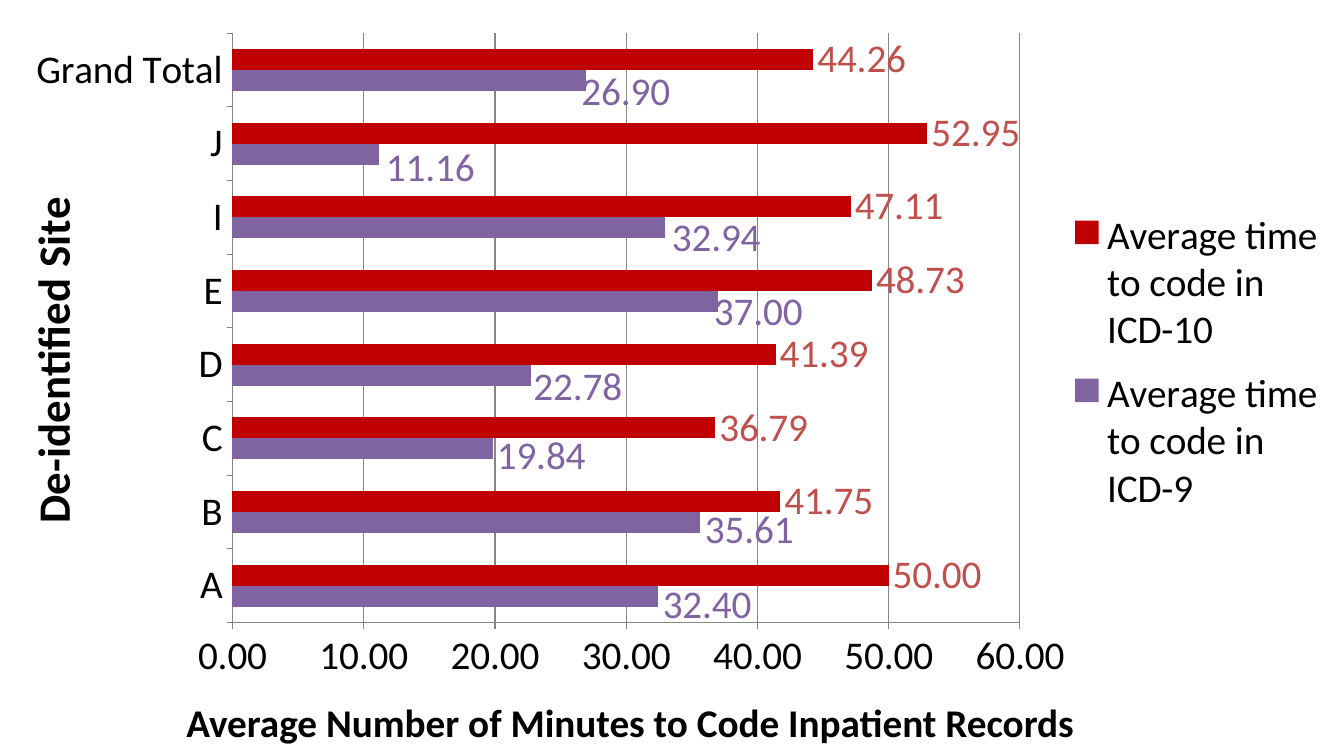
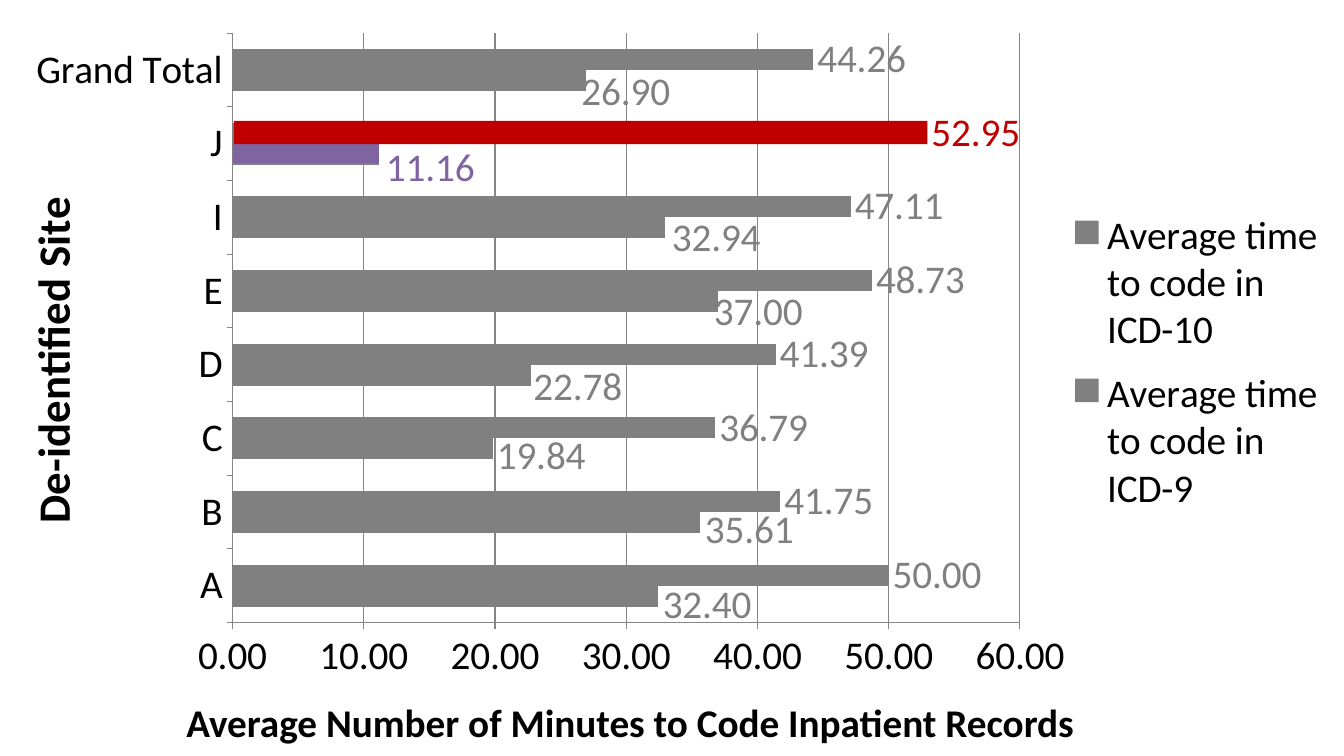
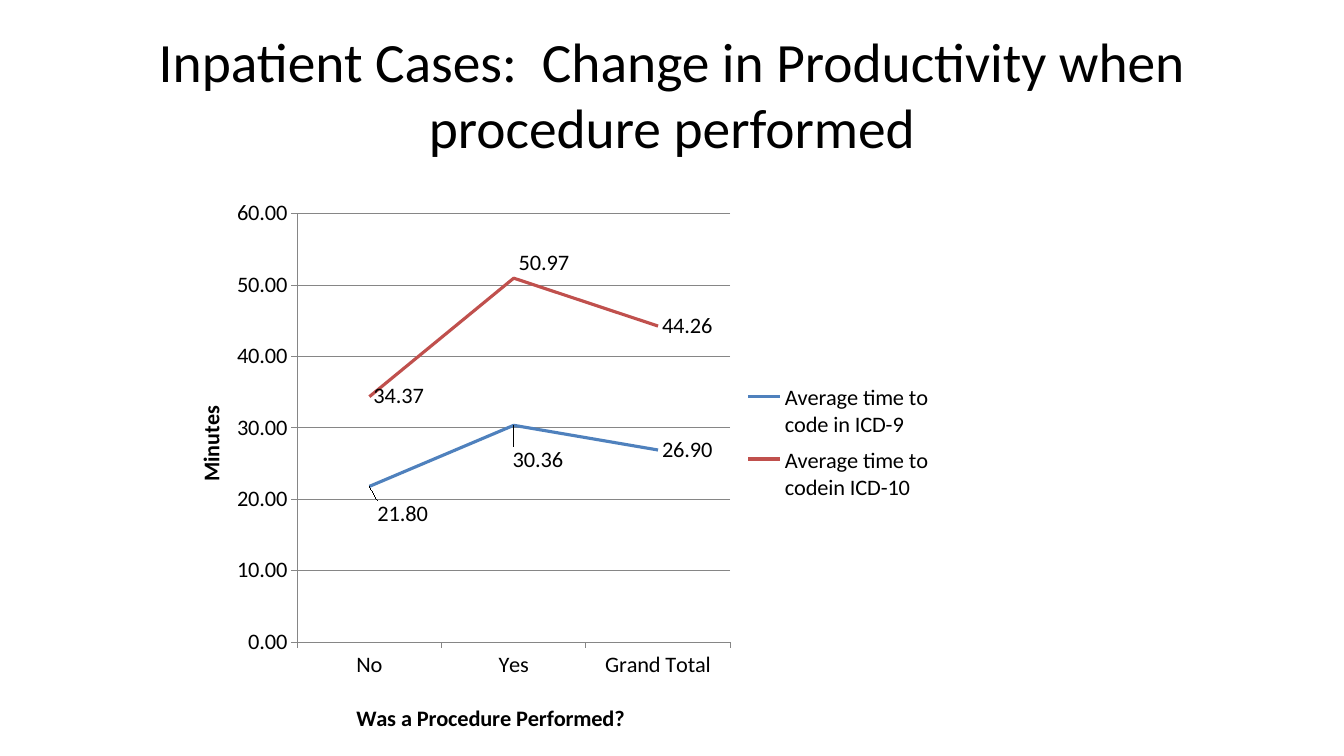
from pptx import Presentation
from pptx.chart.data import CategoryChartData
from pptx.dml.color import RGBColor
from pptx.enum.chart import XL_CHART_TYPE, XL_LABEL_POSITION, XL_LEGEND_POSITION, XL_TICK_MARK
from pptx.enum.shapes import MSO_SHAPE
from pptx.enum.text import MSO_ANCHOR, MSO_AUTO_SIZE, PP_ALIGN
from pptx.oxml import parse_xml
from pptx.oxml.ns import nsdecls, qn
from pptx.util import Inches, Pt

COLORS = {
    "text": "000000", "axis": "868686", "muted": "808080", "purple": "8064A2",
    "crimson": "C00000", "red": "C0504D", "blue": "4F81BD",
}
FONT = "Calibri"
WIDTH, HEIGHT = 13.33, 7.5
COLUMNS, ROWS = 40, 30

ICD9 = "Average time to code in ICD-9"
ICD10 = "Average time to code in ICD-10"
SITES = ["A", "B", "C", "D", "E", "I", "J", "Grand Total"]
SITE_ICD9 = [32.40, 35.61, 19.84, 22.78, 37.00, 32.94, 11.16, 26.90]
SITE_ICD10 = [50.00, 41.75, 36.79, 41.39, 48.73, 47.11, 52.95, 44.26]
# Label shifts in inches, by point
SITE_SHIFTS = dict(enumerate([
    (0.01, 0.09), (0.01, 0.08), (0, 0.07), (-0.02, 0.12),
    (-0.08, 0.11), (0.03, 0.1), (0.03, 0.14), (-0.08, 0.12),
]))
HIGHLIGHT = SITES.index("J")


def style_font(font, size=16, color="text", bold=False):
    font.name, font.size, font.bold = FONT, Pt(size), bold
    font.color.rgb = RGBColor.from_string(COLORS[color])


def write(frame, text, align=PP_ALIGN.CENTER, **style):
    para = frame.paragraphs[0]
    para.alignment = align
    span = para.add_run()
    span.text = text
    style_font(span.font, **style)


def set_layout(part, after=None, inner=False, edge=True, **shares):
    """Place a chart part by shares of the chart's size."""
    for old in part.findall(qn("c:layout")):
        part.remove(old)
    target = '<c:layoutTarget val="inner"/>' if inner else ""
    modes = '<c:xMode val="edge"/><c:yMode val="edge"/>' if edge else ""
    values = "".join(f'<c:{key} val="{value:.4f}"/>' for key, value in shares.items())
    layout = parse_xml(f'<c:layout {nsdecls("c")}><c:manualLayout>{target}{modes}{values}'
                       '</c:manualLayout></c:layout>')
    if after:
        part.find(qn(after)).addnext(layout)
    else:
        part.insert(0, layout)


class SlideMaker:
    def __init__(self):
        self.deck = Presentation()
        self.deck.slide_width, self.deck.slide_height = Inches(WIDTH), Inches(HEIGHT)
        self.page = None

    def cells(self, left, top, width, height):
        column, row = self.deck.slide_width / COLUMNS, self.deck.slide_height / ROWS
        return [round(n) for n in (left * column, top * row, width * column, height * row)]

    def new_page(self, layout):
        self.page = self.deck.slides.add_slide(self.deck.slide_layouts.get_by_name(layout))

    def title(self, text, *place):
        box = self.page.shapes.title
        box.left, box.top, box.width, box.height = self.cells(*place)
        box.text_frame.vertical_anchor = MSO_ANCHOR.MIDDLE
        write(box.text_frame, text, size=39.6)

    def text(self, text, *place, **style):
        box = self.page.shapes.add_textbox(*self.cells(*place))
        box.text_frame.word_wrap = True
        box.text_frame.auto_size = MSO_AUTO_SIZE.SHAPE_TO_FIT_TEXT
        write(box.text_frame, text, **style)

    def bar(self, color, *place):
        shape = self.page.shapes.add_shape(MSO_SHAPE.RECTANGLE, *self.cells(*place))
        shape.shadow.inherit = False
        shape.fill.solid()
        shape.fill.fore_color.rgb = RGBColor.from_string(COLORS[color])
        shape.line.fill.background()

    def chart(self, kind, place, categories, series, plot, legend, size=16):
        data = CategoryChartData(number_format="0.00")
        data.categories = categories
        for entry in series:
            data.add_series(entry["name"], entry["values"])
        frame = self.page.shapes.add_chart(kind, *self.cells(*place), data)
        chart = frame.chart
        style_font(chart.font)
        chart.has_title = False
        chart.plots[0].vary_by_categories = False
        set_layout(chart.plots[0]._element.getparent(), inner=True, **plot)

        # Legend
        chart.has_legend = True
        chart.legend.position = XL_LEGEND_POSITION.RIGHT
        chart.legend.include_in_layout = False
        style_font(chart.legend.font, size=size)
        set_layout(chart.legend._element, after="c:legendPos", **legend)

        # Axes
        for axis in (chart.category_axis, chart.value_axis):
            axis.major_tick_mark = XL_TICK_MARK.OUTSIDE
            axis.minor_tick_mark = XL_TICK_MARK.NONE
            self.rule(axis.format.line)
            style_font(axis.tick_labels.font, size=size)
        values = chart.value_axis
        values.minimum_scale, values.maximum_scale, values.major_unit = 0, 60, 10
        values.tick_labels.number_format = "0.00"
        values.tick_labels.number_format_is_linked = False
        values.has_major_gridlines = True
        self.rule(values.major_gridlines.format.line)

        for drawn, entry in zip(chart.plots[0].series, series):
            self.series(drawn, frame, size=size, **entry)
        return chart

    def rule(self, line):
        line.color.rgb = RGBColor.from_string(COLORS["axis"])
        line.width = Pt(0.75)

    def series(self, drawn, frame, name, values, color, label_color="text",
               shifts=None, accents=None, size=16):
        is_line = hasattr(drawn, "smooth")
        shifts, accents = shifts or {}, accents or {}
        if is_line:
            drawn.smooth = False
            drawn.format.line.width = Pt(2.25)
            paint = drawn.format.line.color
            position = XL_LABEL_POSITION.RIGHT
        else:
            drawn.format.fill.solid()
            paint = drawn.format.fill.fore_color
            position = XL_LABEL_POSITION.OUTSIDE_END
        paint.rgb = RGBColor.from_string(COLORS[color])

        labels = drawn.data_labels
        labels.show_value = True
        labels.number_format, labels.number_format_is_linked = "0.00", False
        labels.position = position
        style_font(labels.font, size=size, color=label_color)

        # Labels that are moved or coloured on their own
        for index in sorted({*shifts, *accents}):
            label = drawn.points[index].data_label
            style_font(label.font, size=size, color=accents.get(index, label_color))
            label.position = position
        for label in drawn._element.iter(qn("c:dLbl")):
            mark = label.find(qn("c:idx"))
            mark.addnext(parse_xml(
                f'<c:numFmt {nsdecls("c")} formatCode="0.00" sourceLinked="0"/>'))
            index = int(mark.get("val"))
            if index in shifts:
                across, down = shifts[index]
                set_layout(label, after="c:idx", edge=False,
                           x=Inches(across) / frame.width, y=Inches(down) / frame.height)

    def axis_title(self, axis, text, x, y, size=16, upright=False):
        axis.has_title = True
        title = axis.axis_title
        write(title.text_frame, text, size=size, bold=True)
        body = next(title._element.iter(qn("a:bodyPr")))
        body.set("rot", "-5400000" if upright else "0")
        body.set("vert", "horz")
        set_layout(title._element, after="c:tx", x=x, y=y)

    def site_page(self, icd9, icd10):
        """Show the minutes for each site, with a format for each series."""
        self.new_page("Blank")
        chart = self.chart(
            XL_CHART_TYPE.BAR_CLUSTERED, (0, -1, 40, 29.32), SITES,
            [dict(name=ICD9, values=SITE_ICD9, shifts=SITE_SHIFTS, **icd9),
             dict(name=ICD10, values=SITE_ICD10, **icd10)],
            plot=dict(x=0.173, y=0.079, w=0.586, h=0.798),
            legend=dict(x=0.79, y=0.3, w=0.2, h=0.45), size=28)
        chart.plots[0].gap_width = 150
        chart.plots[0].overlap = 0
        self.axis_title(chart.category_axis, "De-identified Site", 0.01, 0.29,
                        size=32, upright=True)
        self.text("Average Number of Minutes to Code Inpatient Records",
                  5, 27.5, 27.5, 2.28, size=28, bold=True)


def main():
    maker = SlideMaker()

    # All sites
    maker.site_page(dict(color="purple", label_color="purple"),
                    dict(color="crimson", label_color="red"))

    # Site J picked out
    muted = dict(color="muted", label_color="muted")
    maker.site_page(dict(muted, accents={HIGHLIGHT: "purple"}),
                    dict(muted, accents={HIGHLIGHT: "crimson"}))
    maker.bar("purple", 6.93, 5.68, 4.35, 0.8)
    maker.bar("crimson", 6.96, 4.8, 20.64, 0.92)

    # Effect of a procedure
    maker.new_page("Title Only")
    maker.title("Inpatient Cases:  Change in Productivity when procedure performed",
                2, 1.2, 36, 5)
    chart = maker.chart(
        XL_CHART_TYPE.LINE, (5.25, 7.67, 22.77, 21.67), ["No", "Yes", "Grand Total"],
        [dict(name=ICD9, values=[21.80, 30.36, 26.90], color="blue",
              shifts={0: (0.04, 0.28), 1: (-0.05, 0.35)}),
         dict(name="Average time to codein ICD-10", values=[34.37, 50.97, 44.26],
              color="red", shifts={1: (0.01, -0.15)})],
        plot=dict(x=0.158, y=0.038, w=0.566, h=0.796),
        legend=dict(x=0.74, y=0.34, w=0.25, h=0.25))
    maker.axis_title(chart.category_axis, "Was a Procedure Performed?", 0.23, 0.94)
    maker.axis_title(chart.value_axis, "Minutes", 0.02, 0.39, upright=True)

    maker.deck.save("out.pptx")


if __name__ == "__main__":
    main()
